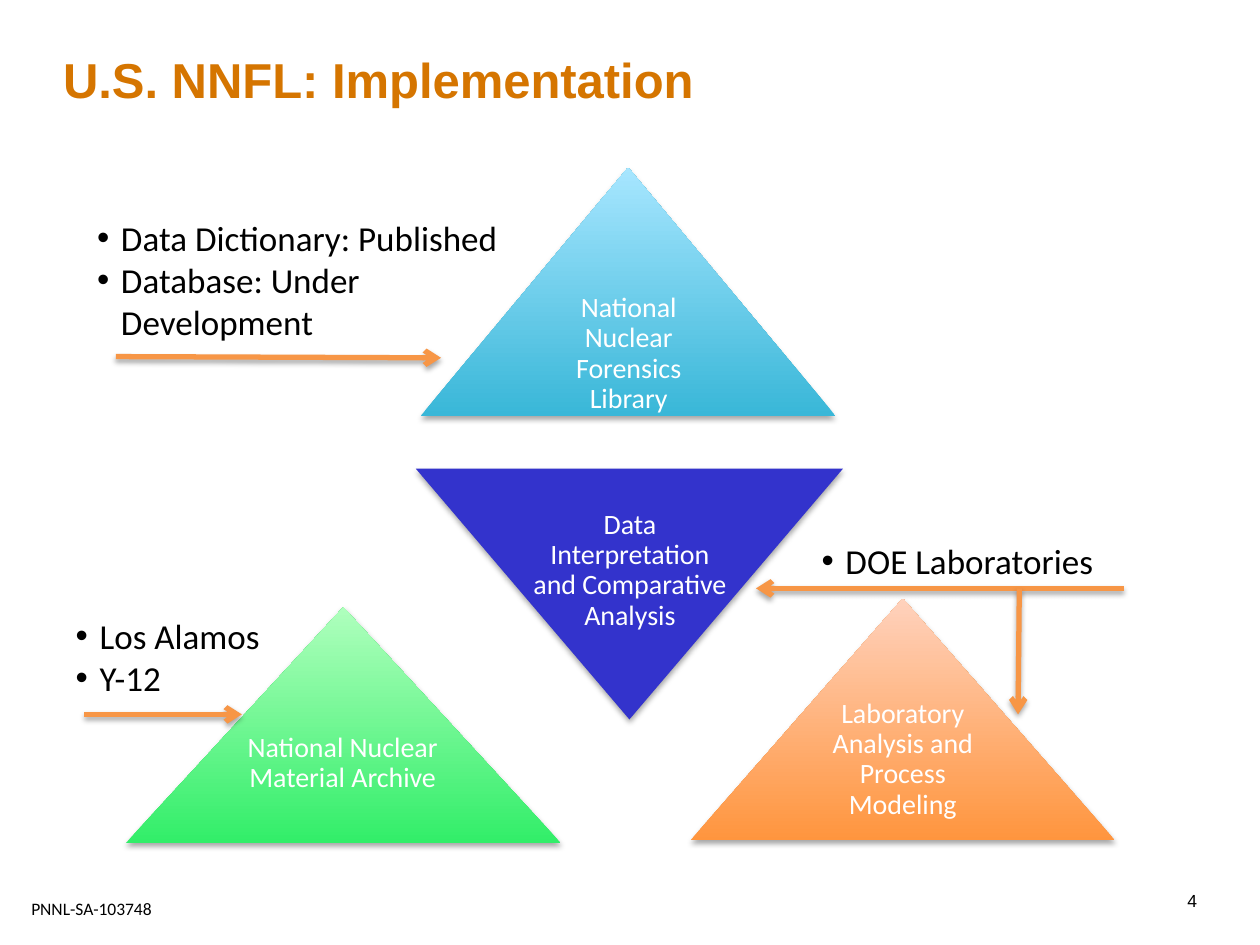
from lxml.etree import SubElement as Sub
from pptx import Presentation
from pptx.dml.color import RGBColor as Rgb
from pptx.enum.shapes import MSO_CONNECTOR as Link, MSO_SHAPE as Form
from pptx.enum.text import MSO_ANCHOR as Anchor, MSO_AUTO_SIZE as Auto, PP_ALIGN as Align
from pptx.oxml import parse_xml
from pptx.oxml.ns import nsdecls, qn
from pptx.util import Inches, Pt

HUES = {"title": "D57500", "text": "000000", "label": "FFFFFF", "arrow": "F79646",
        "sky": "39B7D8", "pale sky": "A7E6FF", "green": "32EE69", "mint": "AFFFBD",
        "blue": "3333CC", "orange": "FF953E", "peach": "FFD2BD"}
TITLE = "U.S. NNFL: Implementation"
PARTS = [
    ("National Nuclear Forensics Library", (3.34, 1.33, 3.29, 1.97),
     ("sky", "pale sky"), (4.17, 2.33, 1.64, 0.99)),
    ("National Nuclear Material Archive", (1, 4.82, 3.45, 1.87),
     ("green", "mint"), (1.86, 5.82, 1.72, 0.94)),
    ("Data Interpretation and Comparative Analysis", (3.3, 3.72, 3.39, 1.99),
     ("blue",), (4.15, 4.05, 1.7, 1)),
    ("Laboratory Analysis and Process Modeling", (5.48, 4.75, 3.37, 1.92),
     ("orange", "peach"), (6.32, 5.55, 1.69, 0.96)),
]
LISTS = [
    (["Data Dictionary: Published", "Database: Under Development"], (0.67, 1.67, 3.75, 1.11)),
    (["DOE Laboratories"], (6.42, 4.23, 2.83, 0.44)),
    (["Los Alamos", "Y-12"], (0.5, 4.83, 2.08, 0.77)),
]
ARROWS = [(0.92, 2.83, 3.5, 2.84), (0.67, 5.67, 1.92, 5.67),
          (8.92, 4.67, 6, 4.67), (8.09, 4.67, 8.08, 5.67)]
CODE = "PNNL-SA-103748"
PAGE = "4"


def color(name):
    return Rgb.from_string(HUES[name])


def place(shape, box):
    shape.left, shape.top, shape.width, shape.height = map(Inches, box)


def style(para, size, hue, face="Calibri", bold=False):
    for run in para.runs:
        font = run.font
        font.size, font.name, font.bold = Pt(size), face, bold
        font.color.rgb = color(hue)


def pad(frame, side, top):
    frame.margin_left = frame.margin_right = Inches(side)
    frame.margin_top = frame.margin_bottom = Inches(top)


def add_text(slide, text, box, size, hue, face="Calibri", wrap=True):
    shape = slide.shapes.add_textbox(*map(Inches, box))
    frame = shape.text_frame
    frame.word_wrap = wrap
    frame.text = text
    style(frame.paragraphs[0], size, hue, face)
    return frame


def shade(props):
    old = props.find(qn("a:effectLst"))
    if old is not None:
        props.remove(old)
    props.append(parse_xml(
        f'<a:effectLst {nsdecls("a")}><a:outerShdw blurRad="{Pt(3.1)}" dist="{Pt(1.8)}" '
        'dir="5400000" rotWithShape="0"><a:srgbClr val="000000"><a:alpha val="35000"/>'
        '</a:srgbClr></a:outerShdw></a:effectLst>'))


def add_part(slide, text, box, hues, spot):
    shape = slide.shapes.add_shape(Form.ISOSCELES_TRIANGLE, *map(Inches, box))
    fill = shape.fill
    if len(hues) == 1:
        fill.solid()
        fill.fore_color.rgb = color(hues[0])
        shape.rotation = 180
    else:
        fill.gradient()
        fill.gradient_angle = 90
        for stop, hue, pos in zip(fill.gradient_stops, hues, (0, 1)):
            stop.color.rgb, stop.position = color(hue), pos
    shape.line.fill.background()
    shape.shadow.inherit = False
    shade(shape._element.spPr)
    frame = add_text(slide, text, spot, 16, "label")
    pad(frame, 0.07, 0)
    para = frame.paragraphs[0]
    para.alignment, para.line_spacing = Align.CENTER, 0.9


def fill_list(holder, items, box):
    place(holder, box)
    frame = holder.text_frame
    frame.text = "\n".join(items)
    frame.auto_size, frame.vertical_anchor = Auto.NONE, Anchor.TOP
    for para in frame.paragraphs:
        props = para._p.get_or_add_pPr()
        props.set("marL", str(Inches(0.19)))
        props.set("indent", str(-Inches(0.19)))
        Sub(props, qn("a:buFont"), typeface="Arial")
        Sub(props, qn("a:buChar"), char="•")
        para.space_before = Pt(0)
        style(para, 20, "text")


def add_arrow(slide, ends):
    arrow = slide.shapes.add_connector(Link.STRAIGHT, *map(Inches, ends))
    arrow.line.width = Pt(3)
    arrow.line.color.rgb = color("arrow")
    Sub(arrow.line._get_or_add_ln(), qn("a:tailEnd"), type="arrow")
    shade(arrow._element.spPr)


def main():
    """Build the library implementation slide."""
    deck = Presentation()
    deck.slide_width, deck.slide_height = Inches(10), Inches(7.5)
    slide = deck.slides.add_slide(deck.slide_layouts.get_by_name("Comparison"))
    title, *holders = slide.placeholders
    place(title, (0.5, 0.39, 7.77, 0.47))
    frame = title.text_frame
    frame.text = TITLE
    frame.auto_size, frame.vertical_anchor = Auto.NONE, Anchor.TOP
    pad(frame, 0, 0)
    frame.paragraphs[0].alignment = Align.LEFT
    style(frame.paragraphs[0], 28, "title", "Arial", True)

    for part in PARTS:
        add_part(slide, *part)
    for holder, entry in zip(holders, LISTS):
        fill_list(holder, *entry)
    for holder in holders[len(LISTS):]:
        holder._element.getparent().remove(holder._element)
    for ends in ARROWS:
        add_arrow(slide, ends)

    frame = add_text(slide, PAGE, (7.17, 6.95, 2.33, 0.4), 10, "text", "Arial")
    pad(frame, 0, 0)
    frame.vertical_anchor = Anchor.MIDDLE
    frame.paragraphs[0].alignment = Align.RIGHT
    add_text(slide, CODE, (0.15, 7.08, 1.17, 0.27), 10, "text", wrap=False)
    deck.save("out.pptx")


if __name__ == "__main__":
    main()
